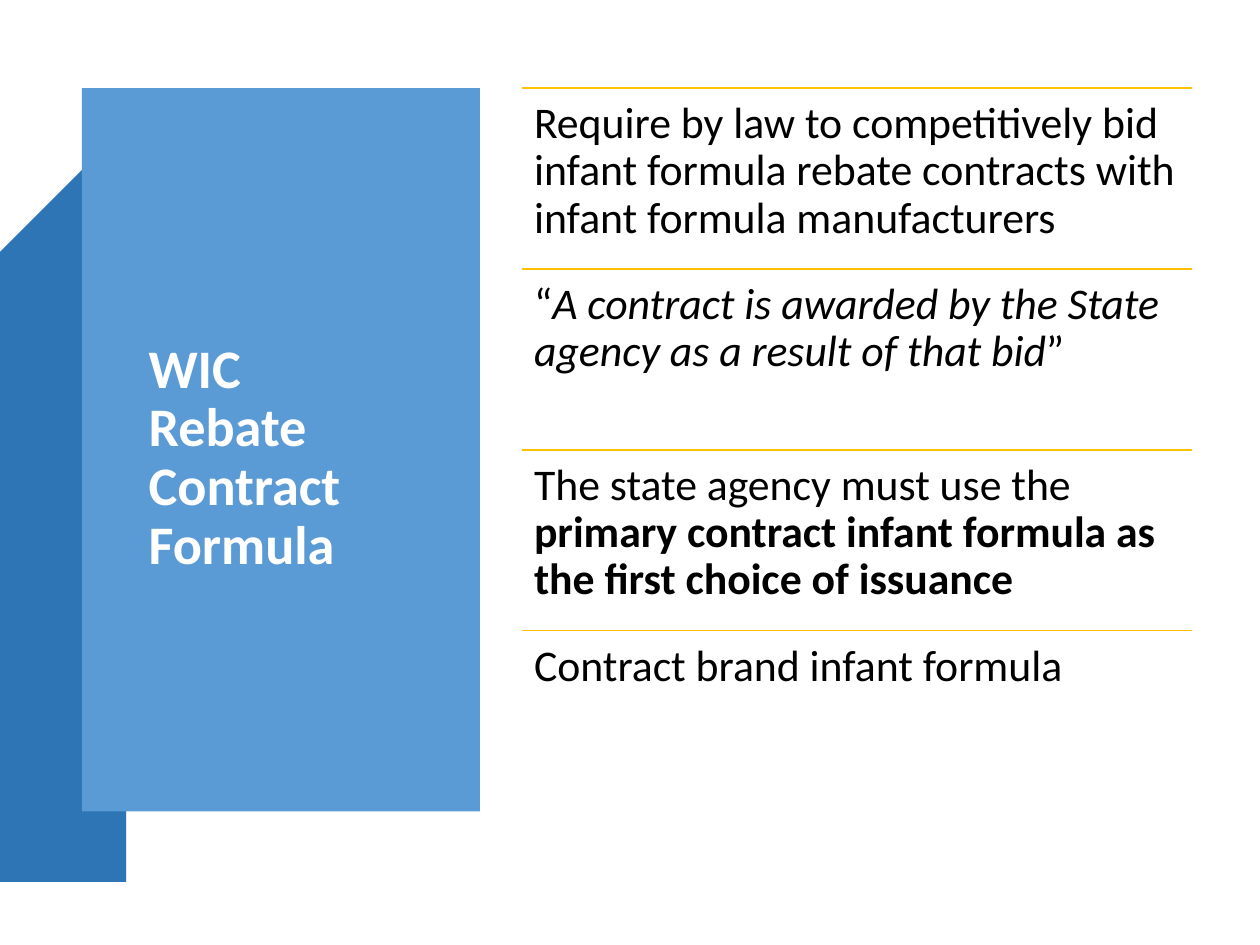
from lxml.etree import SubElement
from pptx import Presentation
from pptx.dml.color import RGBColor
from pptx.enum.shapes import MSO_CONNECTOR, MSO_SHAPE
from pptx.enum.text import MSO_ANCHOR, MSO_AUTO_SIZE, PP_ALIGN
from pptx.oxml.ns import qn
from pptx.util import Inches, Pt

COLORS = {
    "panel": "5B9BD5",
    "ribbon": "2E75B6",
    "fold": "1F4E79",
    "rule": "FFC000",
    "title": "FFFFFF",
    "text": "000000",
}
PANEL = (0.65, 0.7, 3.16, 5.74)
RIBBON = [(0.43, 7.24), (0.99, 6.73), (0.99, 1), (0.43, 1.51)]
FOLD = [(0.66, 6.46), (0.99, 6.74), (0.99, 0.99), (0.66, 0.7)]
LIST_LEFT, LIST_WIDTH = 4.14, 5.32
TITLE = "WIC Rebate Contract Formula"
POINTS = [
    [("Require by law to competitively bid infant formula rebate contracts "
      "with infant formula manufacturers", {})],
    [("“", {}),
     ("A contract is awarded by the State agency as a result of that bid",
      {"italic": True}),
     ("”", {})],
    [("The state agency must use the ", {}),
     ("primary contract infant formula as the first choice of issuance",
      {"bold": True})],
    [("Contract brand infant formula", {})],
]


def rgb(name):
    """Return a named colour of the palette."""
    return RGBColor.from_string(COLORS[name])


def paint(shape, color):
    """Give a shape a plain fill without outline or shadow."""
    shape.shadow.inherit = False
    shape.fill.solid()
    shape.fill.fore_color.rgb = rgb(color)
    shape.line.fill.background()


def add_outline(slide, points, color):
    """Draw a filled polygon through points given in inches."""
    builder = slide.shapes.build_freeform(*points[0], scale=Inches(1))
    builder.add_line_segments(points[1:], close=True)
    paint(builder.convert_to_shape(), color)


def add_panel(slide, box, color):
    """Draw a filled rectangle."""
    shape = slide.shapes.add_shape(MSO_SHAPE.RECTANGLE, *map(Inches, box))
    paint(shape, color)


def add_rule(slide, left, top, width):
    """Draw a thin horizontal line."""
    line = slide.shapes.add_connector(
        MSO_CONNECTOR.STRAIGHT,
        *map(Inches, (left, top, left + width, top)))
    line.line.color.rgb = rgb("rule")
    line.line.width = Pt(1)
    SubElement(line._element.spPr, qn("a:effectLst"))


def write(shape, runs, size, color, bold=False, anchor=MSO_ANCHOR.TOP):
    """Fill a shape with one paragraph of formatted runs."""
    frame = shape.text_frame
    frame.word_wrap = True
    frame.auto_size = MSO_AUTO_SIZE.NONE
    frame.vertical_anchor = anchor
    frame.margin_left = frame.margin_right = Inches(0.1)
    frame.margin_top = frame.margin_bottom = Inches(0.1)
    paragraph = frame.paragraphs[0]
    paragraph.alignment = PP_ALIGN.LEFT
    paragraph.line_spacing = 0.9
    for text, style in runs:
        run = paragraph.add_run()
        run.text = text
        run.font.name = "Calibri"
        run.font.size = Pt(size)
        run.font.color.rgb = rgb(color)
        run.font.bold = style.get("bold", bold)
        run.font.italic = style.get("italic", False)


def place_title(slide):
    """Set the title on the panel."""
    title = slide.shapes.title
    title.left, title.top, title.width, title.height = map(
        Inches, (1.08, 1.67, 2.2, 3.94))
    write(title, [(TITLE, {})], 31, "title", bold=True,
          anchor=MSO_ANCHOR.MIDDLE)
    tree = slide.shapes._spTree
    tree.remove(title._element)
    tree.append(title._element)


def add_points(slide):
    """Stack the ruled points in equal rows along the panel's height."""
    top, height = PANEL[1], PANEL[3] / len(POINTS)
    for row, runs in enumerate(POINTS):
        row_top = top + row * height
        add_rule(slide, LIST_LEFT, row_top, LIST_WIDTH)
        box = slide.shapes.add_textbox(
            *map(Inches, (LIST_LEFT, row_top, LIST_WIDTH, height)))
        write(box, runs, 25, "text")


def main():
    """Build and save the slide."""
    presentation = Presentation()
    presentation.slide_width = Inches(10)
    presentation.slide_height = Inches(7.5)
    slide = presentation.slides.add_slide(presentation.slide_layouts[5])
    add_outline(slide, RIBBON, "ribbon")
    add_outline(slide, FOLD, "fold")
    add_panel(slide, PANEL, "panel")
    place_title(slide)
    add_points(slide)
    presentation.save("out.pptx")


if __name__ == "__main__":
    main()
